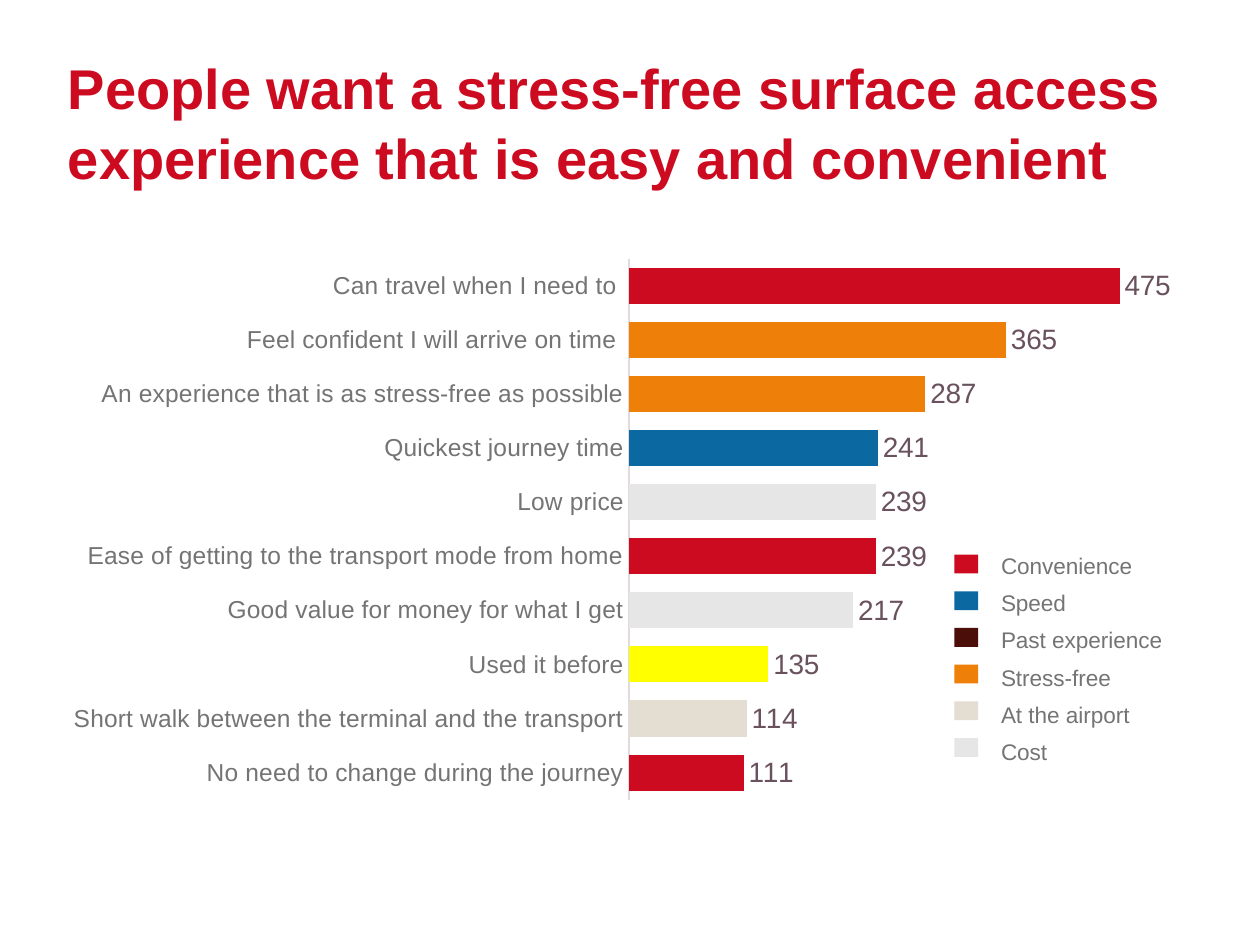
"""Build a slide ranking what people want from surface access to an airport."""
from lxml import etree
from pptx import Presentation
from pptx.chart.data import CategoryChartData
from pptx.dml.color import RGBColor
from pptx.enum.chart import XL_CHART_TYPE, XL_LABEL_POSITION, XL_TICK_MARK
from pptx.enum.shapes import MSO_SHAPE
from pptx.enum.text import MSO_ANCHOR, MSO_AUTO_SIZE, PP_ALIGN
from pptx.util import Cm, Pt

BAR = XL_CHART_TYPE.BAR_CLUSTERED
OUTSIDE = XL_LABEL_POSITION.OUTSIDE_END
NO_TICK = XL_TICK_MARK.NONE
RECTANGLE = MSO_SHAPE.RECTANGLE
LEFT = PP_ALIGN.LEFT
MIDDLE = MSO_ANCHOR.MIDDLE
FIT_SHAPE = MSO_AUTO_SIZE.SHAPE_TO_FIT_TEXT
CHART_SPACE = "http://schemas.openxmlformats.org/drawingml/2006/chart"

THEME = {
    "font": "Arial",
    "title": {"size": 32, "color": "CC0A20", "bold": True},
    "chart": {"size": 14, "color": "2C2227"},
    "category": {"size": 14, "color": "747474"},
    "value": {"size": 16, "color": "69515D"},
    "legend": {"size": 12.9, "color": "747474"},
    "axis": "E3DADF",
    "groups": {
        "Convenience": "CC0A20",
        "Speed": "0C68A0",
        "Past experience": "4B0E08",
        "Stress-free": "EE7F08",
        "At the airport": "E3DDD2",
        "Cost": "E6E6E6",
    },
    "highlight": "FFFF00",
}
GROUPS = THEME["groups"]
REASONS = [
    ("Can travel when I need to ", 475, GROUPS["Convenience"]),
    ("Feel confident I will arrive on time ", 365, GROUPS["Stress-free"]),
    ("An experience that is as stress-free as possible", 287, GROUPS["Stress-free"]),
    ("Quickest journey time", 241, GROUPS["Speed"]),
    ("Low price", 239, GROUPS["Cost"]),
    ("Ease of getting to the transport mode from home", 239, GROUPS["Convenience"]),
    ("Good value for money for what I get", 217, GROUPS["Cost"]),
    ("Used it before", 135, THEME["highlight"]),
    ("Short walk between the terminal and the transport", 114, GROUPS["At the airport"]),
    ("No need to change during the journey", 111, GROUPS["Convenience"]),
]


def style_font(font, style):
    font.color.rgb = RGBColor.from_string(style["color"])
    values = {"name": THEME["font"], "size": Pt(style["size"]), "bold": style.get("bold", False)}
    for name, value in values.items():
        setattr(font, name, value)


def paint(fill, color):
    fill.solid()
    fill.fore_color.rgb = RGBColor.from_string(color)


deck = Presentation()
deck.slide_width, deck.slide_height = Cm(25.4), Cm(19.05)
page = deck.slides.add_slide(deck.slide_layouts[5])

title = page.shapes.title
title_place = {"left": Cm(1.12), "top": Cm(0.94), "width": Cm(23.19), "height": Cm(3)}
for name, value in title_place.items():
    setattr(title, name, value)
title_format = {
    "margin_left": Cm(0.25),
    "margin_right": 0,
    "margin_top": Cm(0.13),
    "margin_bottom": Cm(0.13),
    "vertical_anchor": MIDDLE,
    "word_wrap": True,
    "auto_size": FIT_SHAPE,
}
for name, value in title_format.items():
    setattr(title.text_frame, name, value)
para = title.text_frame.paragraphs[0]
para.alignment = LEFT
para.line_spacing = 1.04
span = para.add_run()
span.text = "People want a stress-free surface access experience that is easy and convenient"
style_font(span.font, THEME["title"])

data = CategoryChartData()
data.categories = [reason for reason, score, color in REASONS]
data.add_series("Series 1", [score for reason, score, color in REASONS])
chart = page.shapes.add_chart(BAR, Cm(1.12), Cm(4.83), Cm(22.89), Cm(11.68), data).chart
chart.has_legend = False
chart.has_title = False
style_font(chart.font, THEME["chart"])

category_axis = chart.category_axis
category_format = {
    "reverse_order": True,
    "major_tick_mark": NO_TICK,
    "minor_tick_mark": NO_TICK,
    "has_major_gridlines": False,
}
for name, value in category_format.items():
    setattr(category_axis, name, value)
style_font(category_axis.tick_labels.font, THEME["category"])
category_axis.format.line.width = Pt(0.75)
category_axis.format.line.color.rgb = RGBColor.from_string(THEME["axis"])

value_format = {
    "minimum_scale": 0,
    "maximum_scale": 500,
    "has_major_gridlines": False,
    "visible": False,
}
for name, value in value_format.items():
    setattr(chart.value_axis, name, value)

plot = chart.plots[0]
plot.gap_width = 50
plot.vary_by_categories = False
series = plot.series[0]
paint(series.format.fill, GROUPS["Convenience"])
for index, (reason, score, color) in enumerate(REASONS):
    paint(series.points[index].format.fill, color)
labels = series.data_labels
label_format = {
    "show_value": True,
    "number_format": "#,##0",
    "number_format_is_linked": False,
    "position": OUTSIDE,
}
for name, value in label_format.items():
    setattr(labels, name, value)
style_font(labels.font, THEME["value"])

plot_area = chart.element.find(f".//{{{CHART_SPACE}}}plotArea")
for former in plot_area.findall(f"{{{CHART_SPACE}}}layout"):
    plot_area.remove(former)
layout = etree.Element(f"{{{CHART_SPACE}}}layout")
manual = etree.SubElement(layout, f"{{{CHART_SPACE}}}manualLayout")
plot_place = {
    "layoutTarget": "inner", "xMode": "edge", "yMode": "edge",
    "x": "0.505", "y": "0.033", "w": "0.455", "h": "0.934",
}
for name, value in plot_place.items():
    etree.SubElement(manual, f"{{{CHART_SPACE}}}{name}", val=value)
plot_area.insert(0, layout)

for row, (group, color) in enumerate(GROUPS.items()):
    swatch = page.shapes.add_shape(
        RECTANGLE, Cm(19.24), Cm(11.18 + 0.74 * row), Cm(0.48), Cm(0.38)
    )
    swatch.shadow.inherit = False
    paint(swatch.fill, color)
    swatch.line.fill.background()

    box = page.shapes.add_textbox(Cm(19.93), Cm(11 + 0.75 * row), Cm(3.8), Cm(0.81))
    box.text_frame.word_wrap = True
    box.text_frame.auto_size = FIT_SHAPE
    span = box.text_frame.paragraphs[0].add_run()
    span.text = group
    style_font(span.font, THEME["legend"])

deck.save("out.pptx")
